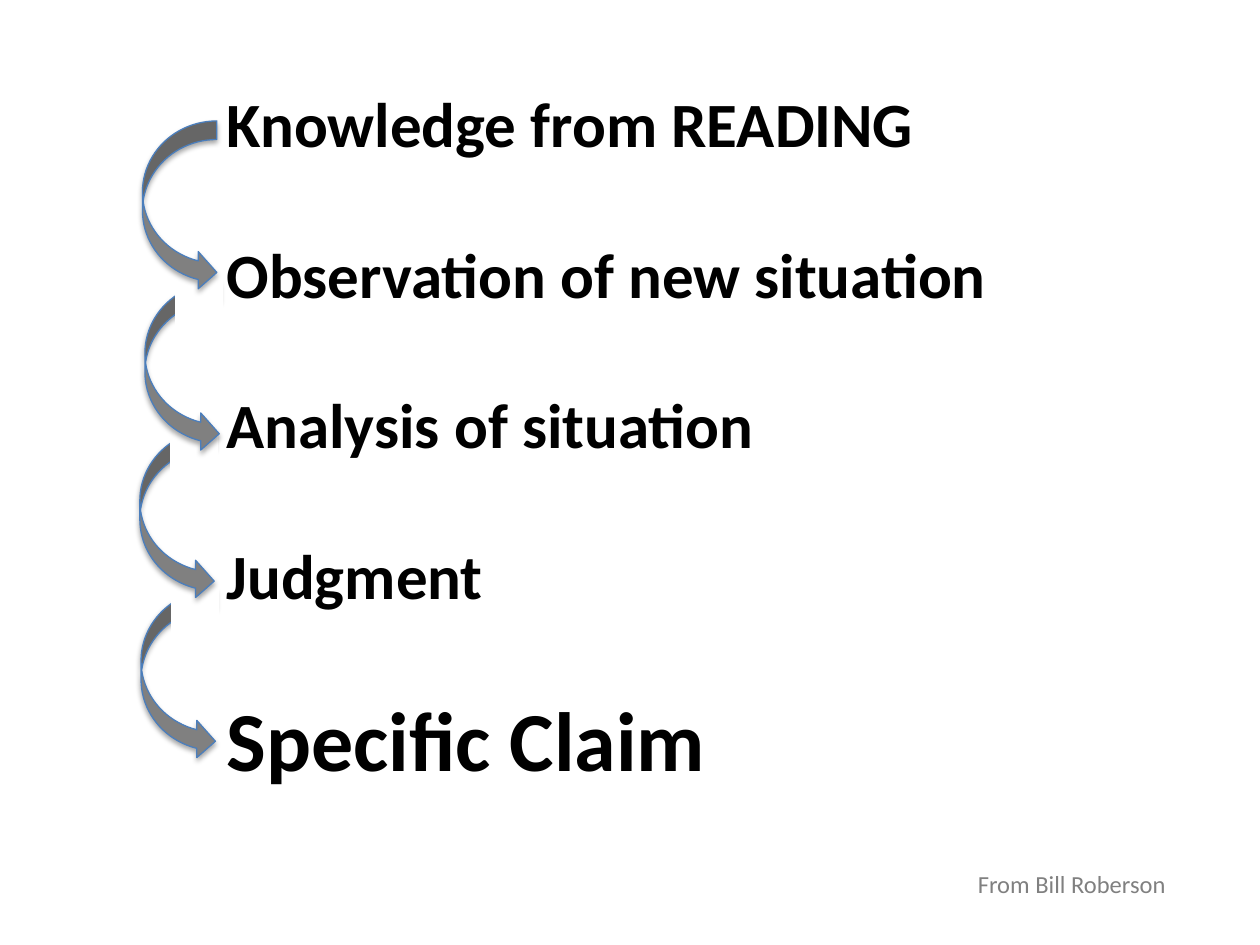
"""Build a slide of five reasoning steps linked by curved arrows."""
from lxml.etree import SubElement
from pptx import Presentation
from pptx.dml.color import RGBColor as RGB
from pptx.enum.shapes import MSO_SHAPE as SHAPE
from pptx.enum.text import MSO_AUTO_SIZE as FIT, PP_ALIGN as ALIGN
from pptx.oxml.ns import qn
from pptx.util import Pt

STEPS = [
    "Knowledge from READING",
    "Observation of new situation",
    "Analysis of situation",
    "Judgment",
    "Specific Claim",
]
CREDIT = "From Bill Roberson"
FIRST_ARROW = (81.4, 69.1)
MASKED_ARROWS = [(80.6, 337), (79.9, 245.5), (82.8, 161.3)]
ARROW_SIZE = (42.5, 97.2)
MASK_OFFSET = (17.5, -8.6)
MASK_SIZE = (26.6, 36.7)
THEME = {
    "font": "Calibri", "step": 36, "claim": 48, "credit": 14, "gap": 43,
    "ink": "000000", "gray": "808080", "edge": "4B7EBC", "paper": "FFFFFF",
}


def color(key):
    return RGB.from_string(THEME[key])


def add_block(parent, kind, corner, size, fill, edge):
    block = parent.shapes.add_shape(kind, *map(Pt, corner + size))
    block.shadow.inherit = False
    block.fill.solid()
    block.fill.fore_color.rgb = color(fill)
    block.line.color.rgb = color(edge)
    block.line.width = Pt(0.75)
    return block


def add_arrow(parent, corner):
    arrow = add_block(parent, SHAPE.CURVED_RIGHT_ARROW, corner, ARROW_SIZE, "gray", "edge")
    effects = arrow._element.spPr.find(qn("a:effectLst"))
    shadow = SubElement(effects, qn("a:outerShdw"), blurRad=str(Pt(3.1)), dist=str(Pt(1.8)),
                        dir="5400000", rotWithShape="0")
    black = SubElement(shadow, qn("a:srgbClr"), val=THEME["ink"])
    SubElement(black, qn("a:alpha"), val="35000")


def add_text(slide, box, lines, ink, align=ALIGN.LEFT, bold=False):
    """Add (wording, size, space after) lines in one text box."""
    frame = slide.shapes.add_textbox(*map(Pt, box)).text_frame
    frame.word_wrap = True
    frame.auto_size = FIT.SHAPE_TO_FIT_TEXT
    frame.text = "\n".join(wording for wording, _, _ in lines)
    for paragraph, (_, size, gap) in zip(frame.paragraphs, lines):
        paragraph.alignment = align
        paragraph.space_after = Pt(gap)
        font = paragraph.runs[0].font
        font.name, font.size, font.bold = THEME["font"], Pt(size), bold
        font.color.rgb = color(ink)


def main():
    deck = Presentation()
    deck.slide_width, deck.slide_height = Pt(720), Pt(540)
    slide = deck.slides.add_slide(deck.slide_layouts[6])

    for left, top in MASKED_ARROWS:
        link = slide.shapes.add_group_shape()
        add_arrow(link, (left, top))
        mask_corner = (left + MASK_OFFSET[0], top + MASK_OFFSET[1])
        add_block(link, SHAPE.RECTANGLE, mask_corner, MASK_SIZE, "paper", "paper")

    *steps, claim = STEPS
    lines = [(step, THEME["step"], THEME["gap"]) for step in steps]
    lines.append((claim, THEME["claim"], 0))
    add_text(slide, (122.4, 44.6, 521.3, 414.7), lines, "ink", bold=True)
    add_arrow(slide, FIRST_ARROW)
    add_text(slide, (499, 493.2, 174.2, 24.5), [(CREDIT, THEME["credit"], 0)],
             "gray", ALIGN.RIGHT)
    deck.save("out.pptx")


if __name__ == "__main__":
    main()
